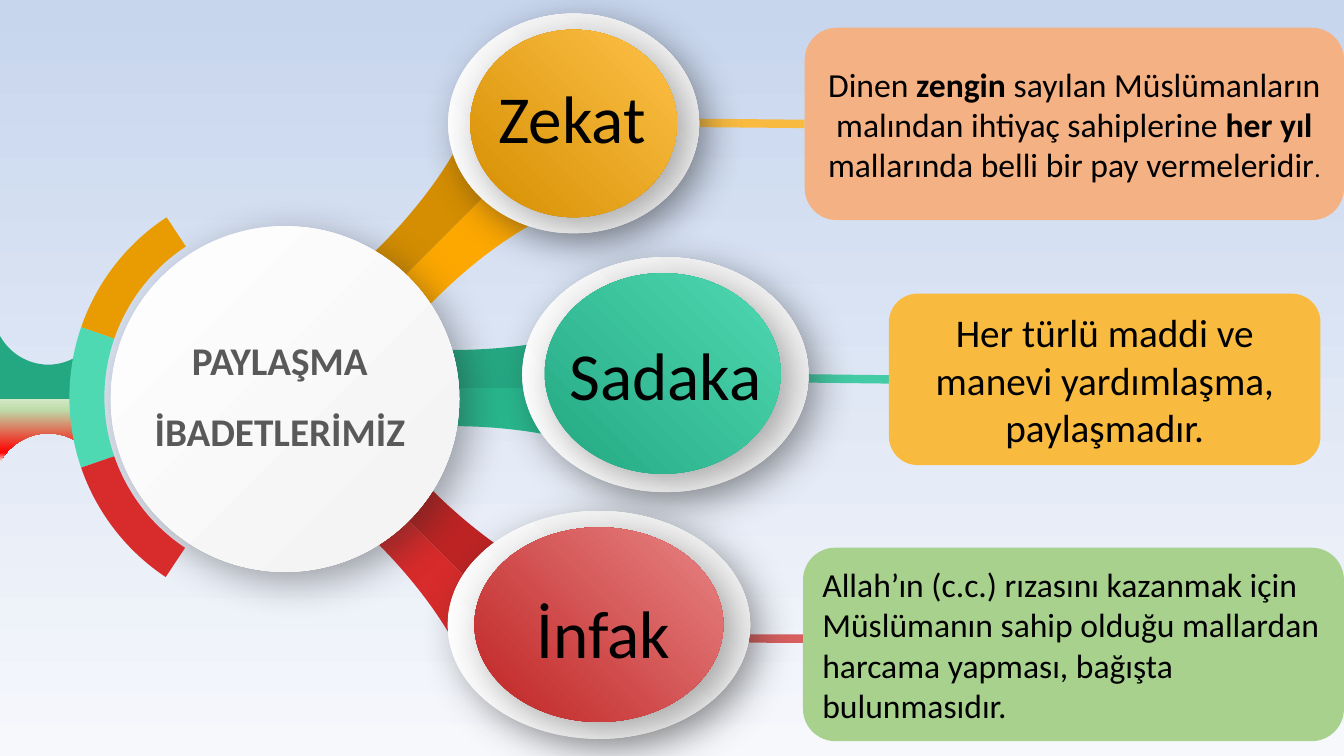
from copy import deepcopy
from math import cos, radians, sin, tan

from lxml import etree
from pptx import Presentation
from pptx import util as u
from pptx.dml.color import RGBColor
from pptx.enum import shapes, text
from pptx.oxml.ns import qn

BLACK = RGBColor(0x00, 0x00, 0x00)
GREY = RGBColor(0x59, 0x59, 0x59)
WHITE = RGBColor(0xFF, 0xFF, 0xFF)
OFF_WHITE = RGBColor(0xF2, 0xF2, 0xF2)
SKY = RGBColor(0xC7, 0xD5, 0xED)
PALE_SKY = RGBColor(0xF6, 0xF8, 0xFC)
AMBER = RGBColor(0xFD, 0xA8, 0x01)
DARK_AMBER = RGBColor(0xD5, 0x8E, 0x01)
ARC_AMBER = RGBColor(0xE9, 0x9C, 0x01)
LIGHT_AMBER = RGBColor(0xFE, 0xC1, 0x48)
YELLOW = RGBColor(0xF9, 0xBB, 0x3F)
GREEN = RGBColor(0x28, 0xB7, 0x8D)
DARK_GREEN = RGBColor(0x24, 0xA8, 0x82)
MINT = RGBColor(0x4F, 0xD9, 0xB2)
LINE_GREEN = RGBColor(0x42, 0xCB, 0xA4)
RED = RGBColor(0xD8, 0x2B, 0x2B)
DARK_RED = RGBColor(0xBF, 0x23, 0x23)
ROSE = RGBColor(0xE8, 0x84, 0x84)
LINE_RED = RGBColor(0xD8, 0x5F, 0x5F)
PURE_RED = RGBColor(0xFF, 0x00, 0x00)
PEACH = RGBColor(0xF4, 0xB1, 0x83)
LEAF = RGBColor(0xA9, 0xD1, 0x8E)
PALE_LEAF = RGBColor(0xD4, 0xE8, 0xC6)
SOFT_LEAF = RGBColor(0xBE, 0xDC, 0xAA)
LEAF_WHITE = RGBColor(0xF8, 0xFB, 0xF6)

HUB = (203.6, 285)
ARC_CENTER = (203.6, 283.9)
STUB_FILL = [(0, PALE_LEAF), (0.17, SOFT_LEAF), (0.85, PURE_RED), (1, LEAF_WHITE)]

ARMS = [
    ((206.6, 279.4), -45, DARK_AMBER, AMBER),
    ((204.5, 277.2), 0, DARK_GREEN, GREEN),
    ((204.5, 284.4), 45, DARK_RED, RED),
]
TOPICS = [
    dict(name="Zekat", ring=((409.7, 88.2), (179.3, 157)), disc=((409.7, 88.2), (147.6, 133.9)),
         colors=(DARK_AMBER, LIGHT_AMBER), label=(327.2, 51.1, 162.7, 65.5),
         line=((499, 87.8), (574.8, 88.5), YELLOW), joined=True,
         box=(574.8, 19.8, 385.2, 137.4), fill=PEACH, align=text.PP_ALIGN.CENTER,
         runs=[("Dinen ", False, 24), ("zengin", True, 24),
               (" sayılan Müslümanların malından ihtiyaç sahiplerine ", False, 24),
               ("her yıl ", True, 24),
               ("mallarında belli bir pay vermeleridir", False, 24), (".", False, 18)]),
    dict(name="Sadaka", ring=((475.3, 267.6), (204.5, 167.8)), disc=((473.4, 266.8), (168.5, 143.3)),
         colors=(DARK_GREEN, MINT), label=(382.3, 234.7, 185.8, 65.5),
         line=((551.5, 270), (635, 271), LINE_GREEN), joined=True,
         box=(635, 209.8, 308.2, 122.4), fill=YELLOW, align=text.PP_ALIGN.CENTER,
         runs=[("Her türlü maddi ve manevi yardımlaşma, paylaşmadır.", False, 28)]),
    dict(name="İnfak", ring=((427.8, 446.4), (216, 162.7)), disc=((427.8, 446.2), (177.8, 139)),
         colors=(DARK_RED, ROSE), label=(349.2, 418.6, 163.4, 65.5),
         line=((520, 456), (635, 456.5), LINE_RED), joined=False,
         box=(573.6, 391.2, 386.4, 138.2), fill=LEAF, align=text.PP_ALIGN.LEFT,
         runs=[("Allah’ın (c.c.) rızasını kazanmak için Müslümanın sahip olduğu "
                "mallardan harcama yapması, bağışta bulunmasıdır.", False, 24)]),
]


def add_run(paragraph, content, size=24, color=BLACK, bold=False, font="Calibri"):
    run = paragraph.add_run()
    run.text = content
    run.font.size = u.Pt(size)
    run.font.name = font
    run.font.bold = bold
    run.font.color.rgb = color


class Diagram:
    def __init__(self, slide):
        self.slide = slide
        self.shapes = slide.shapes

    def gradient(self, fill, element, stops, angle):
        fill.gradient()
        fill.gradient_angle = angle
        stop_list = element.find(".//" + qn("a:gsLst"))
        while len(stop_list) < len(stops):
            stop_list.append(deepcopy(stop_list[0]))
        for stop, (position, color) in zip(fill.gradient_stops, stops):
            stop.position = position
            stop.color.rgb = color

    def paint(self, shape, color):
        shape.shadow.inherit = False
        shape.line.fill.background()
        if isinstance(color, RGBColor):
            shape.fill.solid()
            shape.fill.fore_color.rgb = color
        else:
            self.gradient(shape.fill, shape.element, color, 270)

    def outline(self, points, curve_starts, color):
        units = [(x * 100, y * 100) for x, y in points]
        builder = self.shapes.build_freeform(*units[0], scale=u.Pt(1) / 100)
        builder.add_line_segments(units[1:])
        shape = builder.convert_to_shape()
        segments = list(shape.element.iter(qn("a:lnTo")))
        for first in curve_starts:
            bezier = etree.Element(qn("a:cubicBezTo"))
            segments[first].addprevious(bezier)
            for segment in segments[first:first + 3]:
                bezier.append(segment[0])
                segment.getparent().remove(segment)
        self.paint(shape, color)

    def arm(self, start, angle, length, half, waist, upper, lower):
        c, s = cos(radians(angle)), sin(radians(angle))
        flare = half - waist
        near = [(0.01, waist + 0.95 * flare), (0.11, waist + 0.37 * flare), (0.3, waist), (0.5, waist)]
        far = [(1 - x, y) for x, y in reversed(near)]
        edge = [(0, 0), (0, half), *near, *far[1:], (1, half), (1, 0)]
        for side, color in ((1, lower), (-1, upper)):
            local = [(x * length, y * side) for x, y in edge]
            self.outline([(start[0] + x * c - y * s, start[1] + x * s + y * c)
                          for x, y in local], (2, 5), color)

    def arc(self, first, last, color, inner=129, outer=154):
        def bend(radius, begin, end):
            step = radians(end - begin) / 2
            reach = radius * 4 / 3 * tan(step / 4)
            points = []
            for index in range(3):
                angle = radians(begin) + index * step
                x, y = ARC_CENTER[0] + radius * cos(angle), ARC_CENTER[1] + radius * sin(angle)
                dx, dy = -reach * sin(angle), reach * cos(angle)
                points += [(x - dx, y - dy), (x, y), (x + dx, y + dy)]
            return points[1:-1]

        self.outline(bend(outer, first, last) + bend(inner, last, first), (0, 3, 7, 10), color)

    def ellipse(self, center, size, colors, angle=45):
        left, top = (c - s / 2 for c, s in zip(center, size))
        shape = self.shapes.add_shape(shapes.MSO_SHAPE.OVAL, *map(u.Pt, (left, top, *size)))
        shape.line.fill.background()
        self.gradient(shape.fill, shape.element, list(zip((0, 1), colors)), angle)
        shape.shadow.inherit = False
        effects = shape.element.spPr.find(qn("a:effectLst"))
        shadow = etree.SubElement(effects, qn("a:outerShdw"), blurRad=str(u.Pt(28)),
                                  dist=str(u.Pt(10)), dir="2700000", algn="tl", rotWithShape="0")
        color = etree.SubElement(shadow, qn("a:srgbClr"), val="262626")
        etree.SubElement(color, qn("a:alpha"), val="40000")

    def connector(self, start, end, color):
        line = self.shapes.add_connector(shapes.MSO_CONNECTOR.STRAIGHT, *map(u.Pt, (*start, *end)))
        line.line.color.rgb = color
        line.line.width = u.Pt(6)
        etree.SubElement(line.element.spPr, qn("a:effectLst"))
        return line

    def label(self, content, place):
        frame = self.shapes.add_textbox(*map(u.Pt, place)).text_frame
        frame.word_wrap = True
        frame.auto_size = text.MSO_AUTO_SIZE.SHAPE_TO_FIT_TEXT
        frame.paragraphs[0].alignment = text.PP_ALIGN.CENTER
        add_run(frame.paragraphs[0], content, size=48)

    def title(self, content, place):
        title = self.shapes.title
        title.left, title.top, title.width, title.height = map(u.Pt, place)
        title.element.getparent().append(title.element)
        frame = title.text_frame
        frame.word_wrap = True
        frame.auto_size = text.MSO_AUTO_SIZE.SHAPE_TO_FIT_TEXT
        frame.vertical_anchor = text.MSO_ANCHOR.TOP
        paragraph = frame.paragraphs[0]
        paragraph.alignment = text.PP_ALIGN.CENTER
        paragraph.line_spacing = 1.5
        add_run(paragraph, content, size=28, color=GREY, bold=True)

    def box(self, place, color, align, runs):
        shape = self.shapes.add_shape(shapes.MSO_SHAPE.ROUNDED_RECTANGLE, *map(u.Pt, place))
        self.paint(shape, color)
        frame = shape.text_frame
        frame.word_wrap = True
        frame.vertical_anchor = text.MSO_ANCHOR.MIDDLE
        frame.paragraphs[0].alignment = align
        for content, bold, size in runs:
            add_run(frame.paragraphs[0], content, size=size, bold=bold)
        return shape


def main():
    presentation = Presentation()
    presentation.slide_width, presentation.slide_height = u.Pt(960), u.Pt(540)
    slide = presentation.slides.add_slide(presentation.slide_layouts[5])
    diagram = Diagram(slide)
    diagram.gradient(slide.background.fill, slide.element, [(0, PALE_SKY), (1, SKY)], 90)
    connectors = [diagram.connector(*topic["line"]) for topic in TOPICS]
    for start, angle, upper, lower in ARMS:
        diagram.arm(start, angle, 238, 51, 27.2, upper, lower)
    diagram.ellipse(HUB, (249, 247), (WHITE, OFF_WHITE), angle=315)
    for topic in TOPICS:
        diagram.ellipse(*topic["ring"], (WHITE, OFF_WHITE))
        diagram.ellipse(*topic["disc"], topic["colors"])
        diagram.label(topic["name"], topic["label"])
    diagram.title("PAYLAŞMA İBADETLERİMİZ", (85, 219.9, 229.7, 103))
    diagram.arm((0, 285), 0, 69, 45, 24.5, DARK_GREEN, STUB_FILL)
    for first, last, color in ((199, 236.7, ARC_AMBER), (161, 199, MINT), (123.6, 161, RED)):
        diagram.arc(first, last, color)
    for topic, connector in zip(TOPICS, connectors):
        box = diagram.box(topic["box"], topic["fill"], topic["align"], topic["runs"])
        if topic["joined"]:
            connector.end_connect(box, 1)
    presentation.save("out.pptx")


if __name__ == "__main__":
    main()
